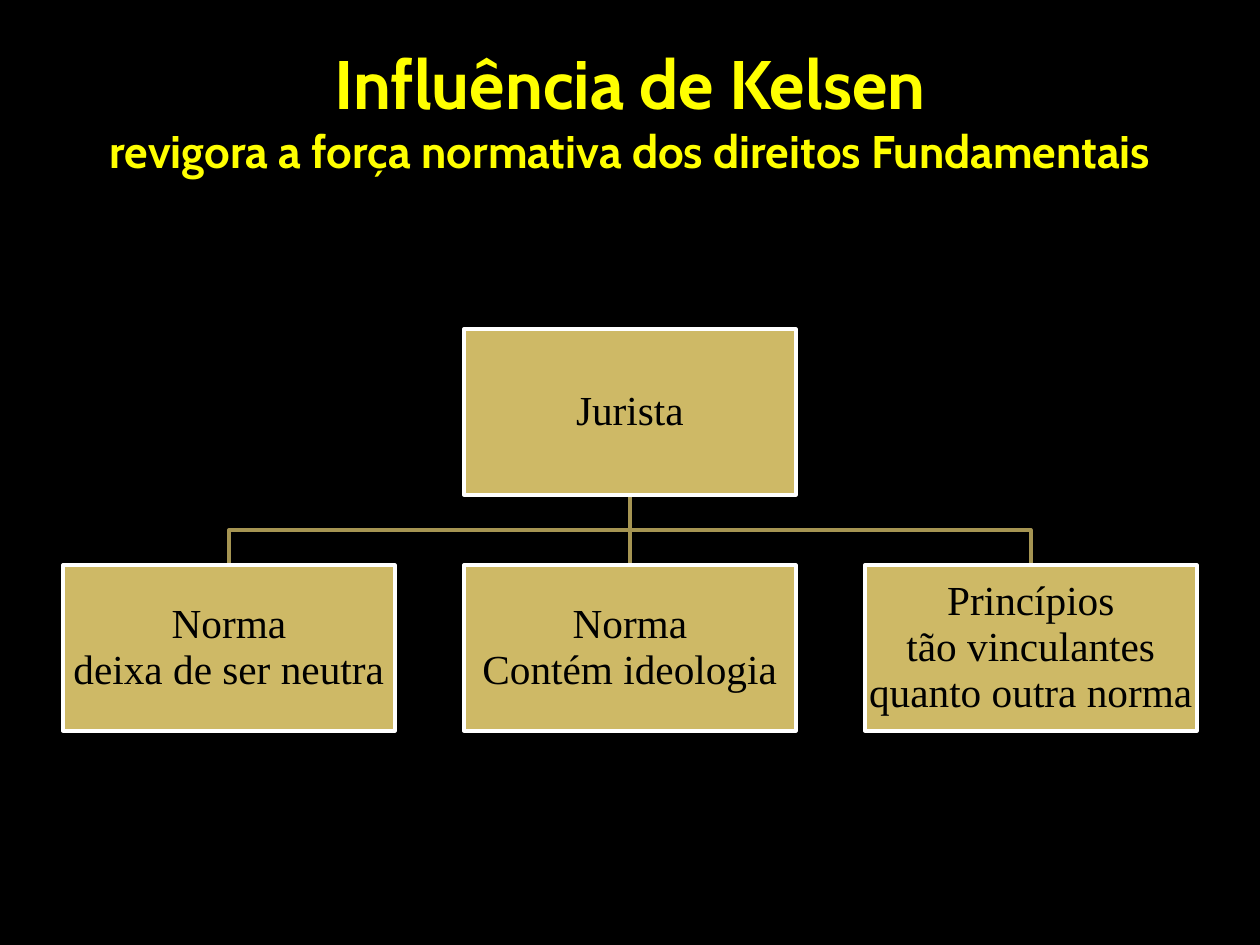
from dataclasses import dataclass

from lxml import etree
from pptx import Presentation
from pptx.dml.color import RGBColor
from pptx.enum.shapes import MSO_CONNECTOR, MSO_SHAPE
from pptx.enum.text import MSO_ANCHOR, MSO_AUTO_SIZE, PP_ALIGN
from pptx.oxml.ns import qn
from pptx.slide import Slide
from pptx.text.text import TextFrame
from pptx.util import Pt

CENTER = PP_ALIGN.CENTER
MIDDLE = MSO_ANCHOR.MIDDLE
NO_AUTOFIT = MSO_AUTO_SIZE.NONE
RECTANGLE = MSO_SHAPE.RECTANGLE
STRAIGHT = MSO_CONNECTOR.STRAIGHT

PX = 8000  # EMU in one px
TITLE_ONLY = 5
PAGE_WIDTH, PAGE_HEIGHT = 1260, 945

# Box grid
BOX_WIDTH, BOX_HEIGHT = 332, 166
LEFT_MARGIN, COLUMN_STEP = 63, 401
TOP_ROW, BOTTOM_ROW = 329, 565


@dataclass(frozen=True)
class Theme:
    background: RGBColor = RGBColor(0x00, 0x00, 0x00)
    title: RGBColor = RGBColor(0xFF, 0xFF, 0x00)
    box: RGBColor = RGBColor(0xCE, 0xB9, 0x66)
    border: RGBColor = RGBColor(0xFF, 0xFF, 0xFF)
    branch: RGBColor = RGBColor(0xA5, 0x94, 0x52)
    text: RGBColor = RGBColor(0x00, 0x00, 0x00)
    title_font: str = "Cabin"
    box_font: str = "Times New Roman"
    title_size: float = 43.2
    subtitle_size: float = 28.8
    box_size: float = 26
    line_width: float = 2
    line_spacing: float = 0.93


@dataclass(frozen=True)
class Node:
    column: int
    top: int
    lines: tuple[str, ...]

    @property
    def left(self) -> int:
        return LEFT_MARGIN + self.column * COLUMN_STEP

    @property
    def middle(self) -> int:
        return self.left + BOX_WIDTH // 2


THEME = Theme()
ROOT = Node(1, TOP_ROW, ("Jurista",))
CHILDREN = (
    Node(0, BOTTOM_ROW, ("Norma", "deixa de ser neutra")),
    Node(1, BOTTOM_ROW, ("Norma", "Contém ideologia")),
    Node(2, BOTTOM_ROW, ("Princípios", "tão vinculantes", "quanto outra norma")),
)


def set_margins(frame: TextFrame, side: int, end: int) -> None:
    frame.margin_left = frame.margin_right = side * PX
    frame.margin_top = frame.margin_bottom = end * PX


def draw_title(page: Slide) -> None:
    title = page.shapes.title
    title.left, title.top = 63 * PX, 10 * PX
    title.width, title.height = 1134 * PX, 199 * PX
    frame = title.text_frame
    frame.word_wrap = True
    frame.auto_size = NO_AUTOFIT
    frame.vertical_anchor = MIDDLE
    set_margins(frame, 13, 7)
    para = frame.paragraphs[0]
    para.alignment = CENTER
    para.font.name = THEME.title_font
    para.font.bold = True
    para.font.color.rgb = THEME.title
    heading = para.add_run()
    heading.text = "Influência de Kelsen"
    heading.font.size = Pt(THEME.title_size)
    para.add_line_break()
    subtitle = para.add_run()
    subtitle.text = "revigora a força normativa dos direitos Fundamentais"
    subtitle.font.size = Pt(THEME.subtitle_size)


def draw_branch(page: Slide, parent: Node, child: Node) -> None:
    start, end = parent.top + BOX_HEIGHT, child.top
    if parent.column == child.column:
        branch = page.shapes.add_connector(
            STRAIGHT, parent.middle * PX, start * PX, child.middle * PX, end * PX
        )
    else:
        bend = (start + end) // 2
        builder = page.shapes.build_freeform(parent.middle, start, scale=PX)
        corners = [(parent.middle, bend), (child.middle, bend), (child.middle, end)]
        builder.add_line_segments(corners, close=False)
        branch = builder.convert_to_shape()
        branch.fill.background()
    branch.line.color.rgb = THEME.branch
    branch.line.width = Pt(THEME.line_width)
    # An empty effect list removes the shadow
    etree.SubElement(branch._element.spPr, qn("a:effectLst"))


def draw_box(page: Slide, node: Node) -> None:
    box = page.shapes.add_shape(
        RECTANGLE, node.left * PX, node.top * PX, BOX_WIDTH * PX, BOX_HEIGHT * PX
    )
    box.shadow.inherit = False
    box.fill.solid()
    box.fill.fore_color.rgb = THEME.box
    box.line.color.rgb = THEME.border
    box.line.width = Pt(THEME.line_width)
    frame = box.text_frame
    frame.word_wrap = True
    frame.vertical_anchor = MIDDLE
    set_margins(frame, 2, 2)
    frame.text = "\n".join(node.lines)
    for para in frame.paragraphs:
        para.alignment = CENTER
        para.line_spacing = THEME.line_spacing
        para.font.name = THEME.box_font
        para.font.size = Pt(THEME.box_size)
        para.font.color.rgb = THEME.text


def main() -> None:
    deck = Presentation()
    deck.slide_width, deck.slide_height = PAGE_WIDTH * PX, PAGE_HEIGHT * PX
    page = deck.slides.add_slide(deck.slide_layouts[TITLE_ONLY])
    page.background.fill.solid()
    page.background.fill.fore_color.rgb = THEME.background

    draw_title(page)
    # Branches lie behind the boxes
    for child in CHILDREN:
        draw_branch(page, ROOT, child)
    for node in (ROOT, *CHILDREN):
        draw_box(page, node)

    deck.save("out.pptx")


if __name__ == "__main__":
    main()
